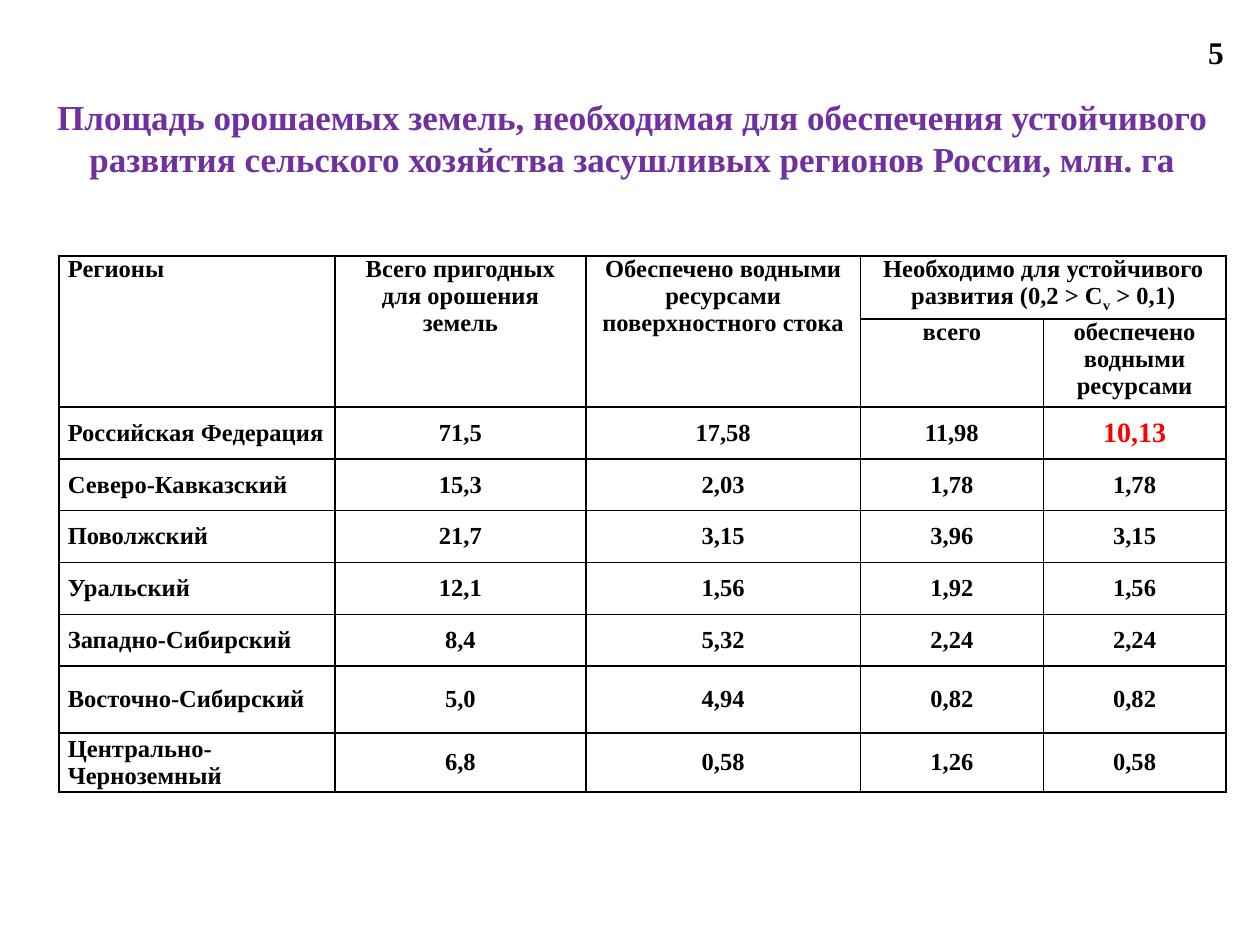
from pptx import Presentation
from pptx.dml.color import RGBColor
from pptx.enum.text import MSO_ANCHOR as Anchor, MSO_AUTO_SIZE as AutoSize, PP_ALIGN as Align
from pptx.oxml import parse_xml
from pptx.oxml.ns import nsdecls
from pptx.util import Pt

BLACK = RGBColor(0x00, 0x00, 0x00)
PURPLE = RGBColor(0x70, 0x30, 0xA0)
RED = RGBColor(0xFF, 0x00, 0x00)

COLUMN_WIDTHS = [157.7, 143.3, 157, 104.4, 104.4]
ROW_HEIGHTS = [36, 50.3] + [29.6] * 5 + [38.2, 33.7]
HEADERS = [
    (0, 0, "Регионы"),
    (0, 1, "Всего пригодных для орошения земель"),
    (0, 2, "Обеспечено водными ресурсами поверхностного стока"),
    (0, 3, "Необходимо для устойчивого развития (0,2 > С"),
    (1, 3, "всего"),
    (1, 4, "обеспечено водными ресурсами"),
]
REGIONS = [
    ("Российская Федерация", "71,5", "17,58", "11,98", "10,13"),
    ("Северо-Кавказский", "15,3", "2,03", "1,78", "1,78"),
    ("Поволжский", "21,7", "3,15", "3,96", "3,15"),
    ("Уральский", "12,1", "1,56", "1,92", "1,56"),
    ("Западно-Сибирский", "8,4", "5,32", "2,24", "2,24"),
    ("Восточно-Сибирский", "5,0", "4,94", "0,82", "0,82"),
    ("Центрально-Черноземный", "6,8", "0,58", "1,26", "0,58"),
]


def add_run(paragraph, text, size=14, color=BLACK):
    run = paragraph.add_run()
    run.text = text
    run.font.name = "Times New Roman"
    run.font.size = Pt(size)
    run.font.bold = True
    run.font.color.rgb = color
    return run


def format_cell(cell):
    """Clear the fill, set the margins and draw a thin black border."""
    cell.margin_left = cell.margin_right = Pt(5)
    cell.margin_top = cell.margin_bottom = 0
    properties = cell._tc.get_or_add_tcPr()
    for side in ("lnL", "lnR", "lnT", "lnB"):
        properties.append(parse_xml(
            f'<a:{side} {nsdecls("a")} w="12700"><a:solidFill>'
            f'<a:srgbClr val="{BLACK}"/></a:solidFill></a:{side}>'))
    cell.fill.background()


presentation = Presentation()
presentation.slide_width = Pt(720)
presentation.slide_height = Pt(540)
slide = presentation.slides.add_slide(presentation.slide_layouts[6])

# Page number
number_frame = slide.shapes.add_textbox(Pt(683.3), Pt(15.1), Pt(23.8), Pt(28.8)).text_frame
number_frame.word_wrap = False
number_frame.auto_size = AutoSize.SHAPE_TO_FIT_TEXT
add_run(number_frame.paragraphs[0], "5", 18)

# Title
title_frame = slide.shapes.add_textbox(Pt(8.6), Pt(33.8), Pt(705.6), Pt(90)).text_frame
title_frame.word_wrap = True
title_frame.vertical_anchor = Anchor.MIDDLE
title = title_frame.paragraphs[0]
title.alignment = Align.CENTER
add_run(title, "Площадь орошаемых земель, необходимая для обеспечения устойчивого "
        "развития сельского хозяйства засушливых регионов России, млн. га", 20, PURPLE)

# Table grid
table = slide.shapes.add_table(
    len(ROW_HEIGHTS), len(COLUMN_WIDTHS), Pt(33.8), Pt(146.2),
    Pt(sum(COLUMN_WIDTHS)), Pt(sum(ROW_HEIGHTS))).table
table.first_row = table.horz_banding = False
for column, width in zip(table.columns, COLUMN_WIDTHS):
    column.width = Pt(width)
for row, height in zip(table.rows, ROW_HEIGHTS):
    row.height = Pt(height)
for cell in table.iter_cells():
    format_cell(cell)
for column_index in range(3):
    table.cell(0, column_index).merge(table.cell(1, column_index))
table.cell(0, 3).merge(table.cell(0, 4))

# Table headers
for row_index, column_index, text in HEADERS:
    paragraph = table.cell(row_index, column_index).text_frame.paragraphs[0]
    paragraph.alignment = Align.CENTER if column_index else Align.JUSTIFY
    add_run(paragraph, text)
needed = table.cell(0, 3).text_frame.paragraphs[0]
subscript = add_run(needed, "v")
subscript.font._element.set("baseline", "-25000")
add_run(needed, " > 0,1)")

# Table values
for row_index, values in enumerate(REGIONS, start=2):
    for column_index, text in enumerate(values):
        cell = table.cell(row_index, column_index)
        cell.vertical_anchor = Anchor.MIDDLE
        paragraph = cell.text_frame.paragraphs[0]
        paragraph.alignment = Align.CENTER if column_index else Align.LEFT
        if text == "10,13":
            add_run(paragraph, text, 16, RED)
        else:
            add_run(paragraph, text)

presentation.save("out.pptx")
